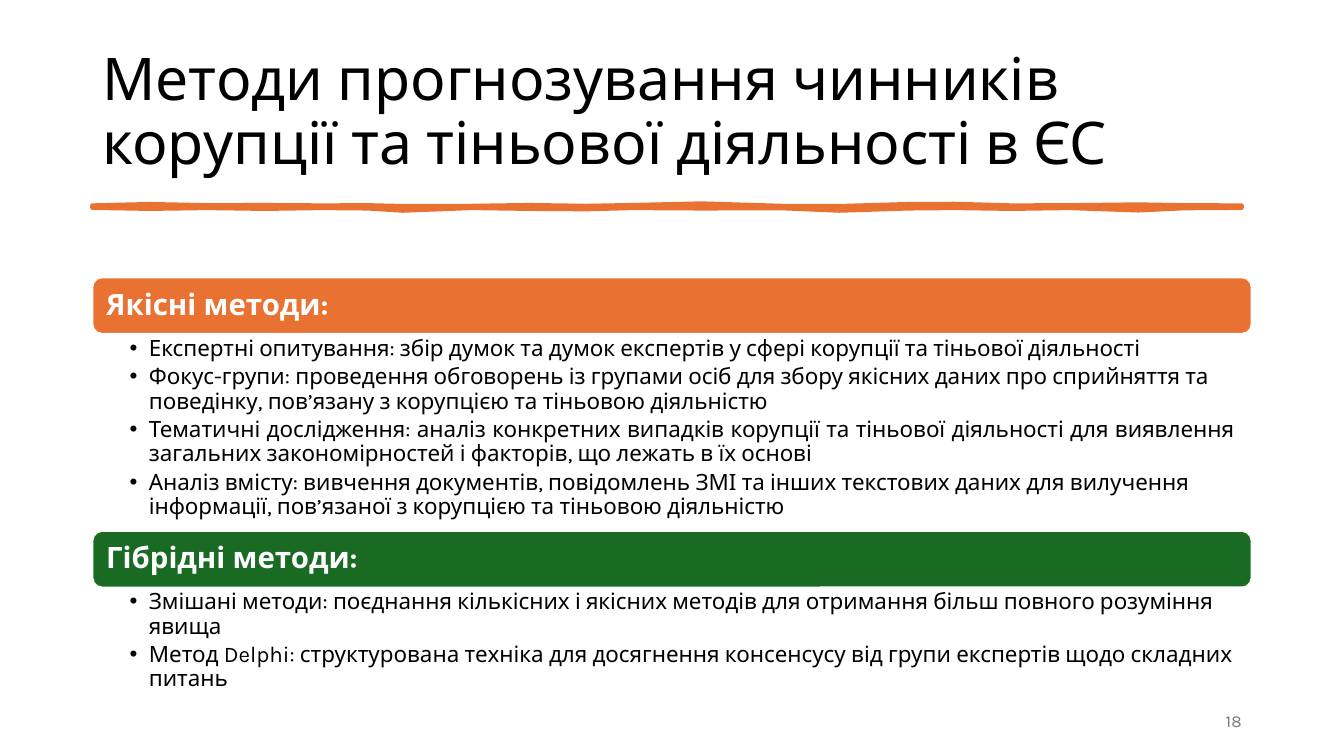
from collections import namedtuple

from lxml.etree import SubElement
from pptx import Presentation
from pptx.dml.color import RGBColor
from pptx.enum.shapes import MSO_SHAPE
from pptx.enum.text import MSO_ANCHOR, MSO_AUTO_SIZE, PP_ALIGN
from pptx.oxml.ns import qn
from pptx.util import Inches, Pt

FONT = "Karla"
COLORS = {
    "text": "000000",
    "paper": "FFFFFF",
    "orange": "E97132",
    "green": "196B24",
    "number": "797979",
}
COLUMNS, ROWS = 160, 90
SLIDE_WIDTH, SLIDE_HEIGHT = Inches(13.33), Inches(7.5)
HEADER_ROWS = 6.75
Box = namedtuple("Box", "left top width height")

TITLE_BOX = Box(11, 4.8, 138, 17.4)
RULE_BOX = Box(11, 24.6, 136.8, 0.24)
NUMBER_BOX = Box(113, 83.4, 36, 4.8)
RULE_WOBBLE = [
    (0, -0.5, 0.5), (0.05, -1.2, 1), (0.1, -0.6, 0.6), (0.15, -0.7, 1),
    (0.2, -0.5, 0.6), (0.24, -0.6, 0.8), (0.27, -0.2, 1.9), (0.33, -0.3, 0.6),
    (0.38, -0.7, 1), (0.43, -0.3, 1.2), (0.47, -0.7, 0.6), (0.53, -1.5, 0.8),
    (0.6, -0.3, 0.7), (0.65, -0.2, 1.9), (0.71, -1.2, 0.8), (0.75, -1.3, 0.6),
    (0.8, -0.5, 1), (0.85, -0.6, 0.6), (0.91, -1, 1.8), (0.95, -0.6, 0.7),
    (1, -0.5, 0.5),
]
SECTIONS = [
    (Box(11, 33, 138, 30.2), "orange", "Якісні методи:", [
        ("Експертні опитування: збір думок та думок експертів у сфері корупції "
         "та тіньової діяльності", PP_ALIGN.LEFT),
        ("Фокус-групи: проведення обговорень із групами осіб для збору якісних "
         "даних про сприйняття та поведінку, пов’язану з корупцією та тіньовою "
         "діяльністю", PP_ALIGN.LEFT),
        ("Тематичні дослідження: аналіз конкретних випадків корупції та тіньової "
         "діяльності для виявлення загальних закономірностей і факторів, що "
         "лежать в їх основі", PP_ALIGN.JUSTIFY),
        ("Аналіз вмісту: вивчення документів, повідомлень ЗМІ та інших текстових "
         "даних для вилучення інформації, пов’язаної з корупцією та тіньовою "
         "діяльністю", PP_ALIGN.LEFT),
    ]),
    (Box(11, 63.2, 138, 14.1), "green", "Гібрідні методи:", [
        ("Змішані методи: поєднання кількісних і якісних методів для отримання "
         "більш повного розуміння явища", PP_ALIGN.LEFT),
        ("Метод Delphi: структурована техніка для досягнення консенсусу від групи "
         "експертів щодо складних питань", PP_ALIGN.LEFT),
    ]),
]


def color(name):
    """Return the named colour."""
    return RGBColor.from_string(COLORS[name])


def across(columns):
    """Convert grid columns to a length."""
    return round(SLIDE_WIDTH * columns / COLUMNS)


def down(rows):
    """Convert grid rows to a length."""
    return round(SLIDE_HEIGHT * rows / ROWS)


def lengths(box):
    """Convert a grid box to left, top, width and height."""
    return across(box.left), down(box.top), across(box.width), down(box.height)


def place(shape, box):
    """Move and size a shape to fill a grid box."""
    shape.left, shape.top, shape.width, shape.height = lengths(box)


def frame_text(shape, anchor, margins=(0.1, 0.05, 0.1, 0.05)):
    """Prepare the text frame of a shape and return it."""
    frame = shape.text_frame
    frame.word_wrap = True
    frame.auto_size = MSO_AUTO_SIZE.NONE
    frame.vertical_anchor = anchor
    (frame.margin_left, frame.margin_top,
     frame.margin_right, frame.margin_bottom) = map(Inches, margins)
    return frame


def write(paragraph, text, size, ink="text", bold=False, align=PP_ALIGN.LEFT,
          after=0, spacing=0.9):
    """Write one formatted run in a paragraph."""
    paragraph.alignment = align
    paragraph.line_spacing = spacing
    paragraph.space_before = Pt(0)
    paragraph.space_after = Pt(after)
    run = paragraph.add_run()
    run.text = text
    run.font.name = FONT
    run.font.size = Pt(size)
    run.font.bold = bold
    run.font.color.rgb = color(ink)


def add_bullet(paragraph):
    """Give a paragraph a hanging round bullet."""
    properties = paragraph._p.get_or_add_pPr()
    properties.set("marL", str(Inches(0.19)))
    properties.set("indent", str(-Inches(0.19)))
    SubElement(properties, qn("a:buFont"), typeface="Arial")
    SubElement(properties, qn("a:buChar"), char="•")


def fill_title(title, box):
    """Place the slide title."""
    place(title, box)
    frame = frame_text(title, MSO_ANCHOR.MIDDLE)
    write(frame.paragraphs[0], "Методи прогнозування чинників корупції "
          "та тіньової діяльності в ЄС", 42)


def draw_rule(slide, box):
    """Draw the uneven brush stroke under the title."""
    left, top, width, height = lengths(box)
    upper = [(left + width * share, top + height * rise)
             for share, rise, _ in RULE_WOBBLE]
    lower = [(left + width * share, top + height * fall)
             for share, _, fall in reversed(RULE_WOBBLE)]
    outline = upper + lower
    builder = slide.shapes.build_freeform(*outline[0])
    builder.add_line_segments(outline[1:], close=True)
    stroke = builder.convert_to_shape()
    stroke.shadow.inherit = False
    stroke.fill.solid()
    stroke.fill.fore_color.rgb = color("orange")
    stroke.line.color.rgb = color("orange")
    stroke.line.width = Pt(3.25)
    SubElement(stroke._element.spPr.find(qn("a:ln")), qn("a:round"))


def add_section(slide, body, box, fill, heading, items):
    """Place a coloured heading bar with its bullet list below."""
    bar = slide.shapes.add_shape(MSO_SHAPE.ROUNDED_RECTANGLE,
                                 *lengths(box._replace(height=HEADER_ROWS)))
    bar.shadow.inherit = False
    bar.fill.solid()
    bar.fill.fore_color.rgb = color(fill)
    bar.line.color.rgb = color("paper")
    bar.line.width = Pt(1.5)
    frame = frame_text(bar, MSO_ANCHOR.MIDDLE, (0.11, 0.09, 0.11, 0.09))
    write(frame.paragraphs[0], heading, 21, ink="paper", bold=True)

    place(body, box._replace(top=box.top + HEADER_ROWS,
                             height=box.height - HEADER_ROWS))
    frame = frame_text(body, MSO_ANCHOR.TOP, (0.37, 0.03, 0.16, 0.03))
    for index, (text, align) in enumerate(items):
        paragraph = frame.add_paragraph() if index else frame.paragraphs[0]
        paragraph.level = 1
        write(paragraph, text, 16, align=align, after=3.2)
        add_bullet(paragraph)


def add_number(slide, box):
    """Place the slide number."""
    number = slide.shapes.add_textbox(*lengths(box))
    frame = frame_text(number, MSO_ANCHOR.MIDDLE)
    write(frame.paragraphs[0], "18", 12, ink="number", align=PP_ALIGN.RIGHT,
          after=6, spacing=1.0)


def main():
    """Build and save the presentation."""
    presentation = Presentation()
    presentation.slide_width, presentation.slide_height = SLIDE_WIDTH, SLIDE_HEIGHT
    slide = presentation.slides.add_slide(
        presentation.slide_layouts.get_by_name("Two Content"))
    title, *bodies = slide.placeholders
    fill_title(title, TITLE_BOX)
    draw_rule(slide, RULE_BOX)
    for body, section in zip(bodies, SECTIONS):
        add_section(slide, body, *section)
    add_number(slide, NUMBER_BOX)
    presentation.save("out.pptx")


if __name__ == "__main__":
    main()
